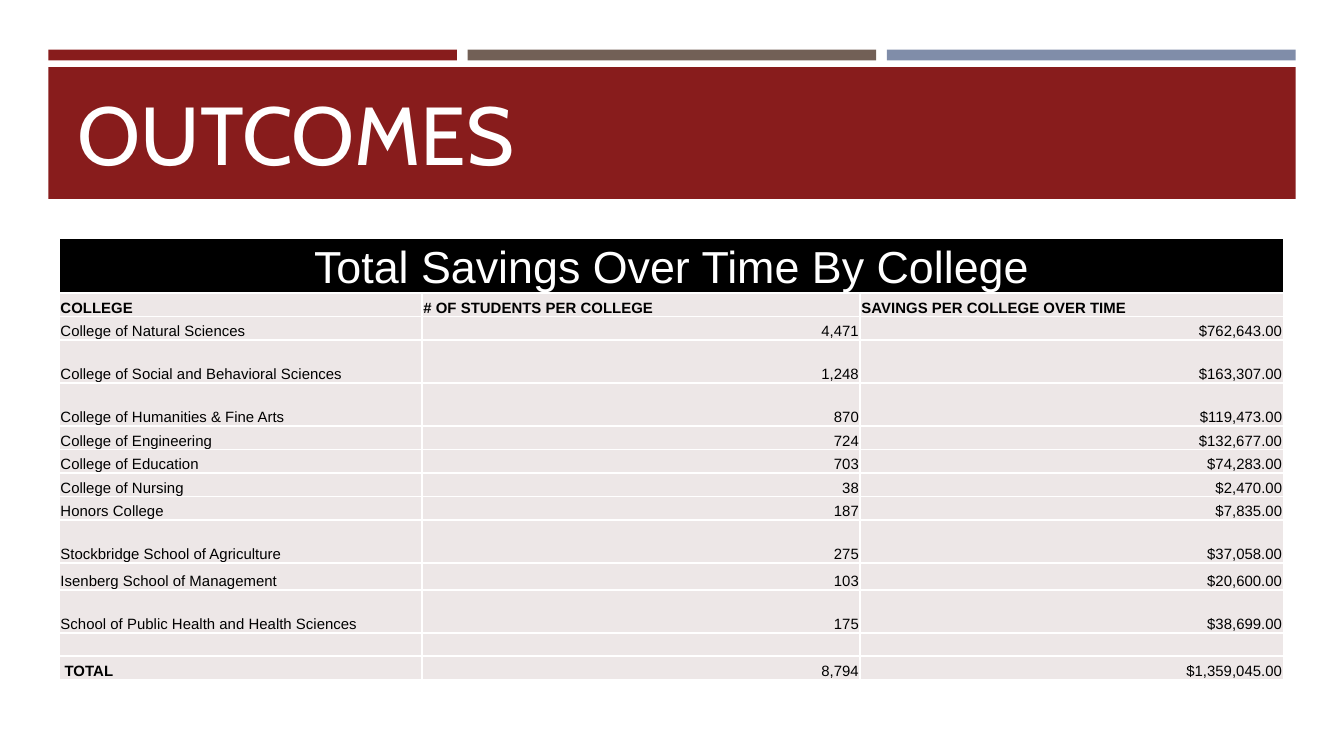
import pptx
import pptx.util
import pptx.dml.color
import pptx.enum.shapes
import pptx.enum.text
import pptx.oxml
import pptx.oxml.ns

Inches = pptx.util.Inches
Align = pptx.enum.text.PP_ALIGN
Anchor = pptx.enum.text.MSO_ANCHOR

COLORS = {
    "red": "881C1C",
    "brown": "726056",
    "blue": "808DA9",
    "row": "EDE7E7",
    "black": "000000",
    "white": "FFFFFF",
}

COLUMN_WIDTHS = [2.7, 3.26, 3.15]
BANNER_ROW, SHORT_ROW, MEDIUM_ROW, TALL_ROW = 0.35, 0.35 / 2, 0.2, 0.32

HEADINGS = ("COLLEGE", "# OF STUDENTS PER COLLEGE", "SAVINGS PER COLLEGE OVER TIME")
COLLEGES = [
    (SHORT_ROW, "College of Natural Sciences", "4,471", "$762,643.00"),
    (TALL_ROW, "College of Social and Behavioral Sciences", "1,248", "$163,307.00"),
    (TALL_ROW, "College of Humanities & Fine Arts", "870", "$119,473.00"),
    (SHORT_ROW, "College of Engineering", "724", "$132,677.00"),
    (SHORT_ROW, "College of Education", "703", "$74,283.00"),
    (SHORT_ROW, "College of Nursing", "38", "$2,470.00"),
    (SHORT_ROW, "Honors College", "187", "$7,835.00"),
    (TALL_ROW, "Stockbridge School of Agriculture", "275", "$37,058.00"),
    (MEDIUM_ROW, "Isenberg School of Management", "103", "$20,600.00"),
    (TALL_ROW, "School of Public Health and Health Sciences", "175", "$38,699.00"),
    (SHORT_ROW, "", "", ""),
    (SHORT_ROW, " TOTAL", "8,794", "$1,359,045.00"),
]


def rgb(name):
    return pptx.dml.color.RGBColor.from_string(COLORS[name])


def add_bar(slide, left, top, width, height, color):
    shape = slide.shapes.add_shape(
        pptx.enum.shapes.MSO_SHAPE.RECTANGLE,
        Inches(left), Inches(top), Inches(width), Inches(height))
    shape.shadow.inherit = False
    shape.fill.solid()
    shape.fill.fore_color.rgb = rgb(color)
    shape.line.fill.background()


def add_run(paragraph, text, font, size, color, bold=False):
    run = paragraph.add_run()
    run.text = text
    run.font.name = font
    run.font.size = pptx.util.Pt(size)
    run.font.color.rgb = rgb(color)
    run.font.bold = bold


def add_title(slide, text):
    box = slide.shapes.add_textbox(Inches(0.48), Inches(0.57), Inches(9.05), Inches(0.83))
    frame = box.text_frame
    frame.word_wrap = True
    frame.vertical_anchor = Anchor.BOTTOM
    add_run(frame.paragraphs[0], text, "Cabin", 44, "white")


def add_borders(cell):
    properties = cell._tc.get_or_add_tcPr()
    for position, side in enumerate(("lnL", "lnR", "lnT", "lnB")):
        border = pptx.oxml.parse_xml(
            f'<a:{side} {pptx.oxml.ns.nsdecls("a")} w="12700"><a:solidFill>'
            f'<a:srgbClr val="{COLORS["white"]}"/></a:solidFill></a:{side}>')
        properties.insert(position, border)


def fill_cell(cell, text, align=Align.LEFT, size=8, color="black", fill="row", bold=False):
    cell.fill.solid()
    cell.fill.fore_color.rgb = rgb(fill)
    cell.margin_left = cell.margin_right = cell.margin_top = Inches(0.01)
    cell.margin_bottom = 0
    cell.vertical_anchor = Anchor.BOTTOM
    add_borders(cell)
    paragraph = cell.text_frame.paragraphs[0]
    paragraph.alignment = align
    if text:
        add_run(paragraph, text, "Arial", size, color, bold)
    else:
        paragraph._p.get_or_add_endParaRPr().set("sz", str(size * 100))


def add_savings_table(slide):
    heights = [BANNER_ROW, SHORT_ROW] + [college[0] for college in COLLEGES]
    table = slide.shapes.add_table(
        len(heights), len(COLUMN_WIDTHS), Inches(0.44), Inches(1.77),
        Inches(sum(COLUMN_WIDTHS)), Inches(sum(heights))).table
    table.first_row = table.horz_banding = False
    for column, width in zip(table.columns, COLUMN_WIDTHS):
        column.width = Inches(width)
    for row, height in zip(table.rows, heights):
        row.height = Inches(height)

    table.cell(0, 0).merge(table.cell(0, 2))
    fill_cell(table.cell(0, 0), "Total Savings Over Time By College",
              Align.CENTER, 24, "white", "black")
    for column, heading in enumerate(HEADINGS):
        fill_cell(table.cell(1, column), heading, bold=True)
    for row, (_, college, students, savings) in enumerate(COLLEGES, start=2):
        fill_cell(table.cell(row, 0), college, bold=row == len(heights) - 1)
        fill_cell(table.cell(row, 1), students, Align.RIGHT)
        fill_cell(table.cell(row, 2), savings, Align.RIGHT)


def main():
    presentation = pptx.Presentation()
    presentation.slide_width = Inches(10)
    presentation.slide_height = Inches(10 * 9 / 16)
    slide = presentation.slides.add_slide(presentation.slide_layouts[6])

    for index, color in enumerate(("red", "brown", "blue")):
        add_bar(slide, 0.36 + index * 3.12, 0.37, 3.04, 0.08, color)
    add_bar(slide, 0.36, 0.5, 9.28, 0.98, "red")
    add_title(slide, "OUTCOMES")
    add_savings_table(slide)
    presentation.save("out.pptx")


if __name__ == "__main__":
    main()
